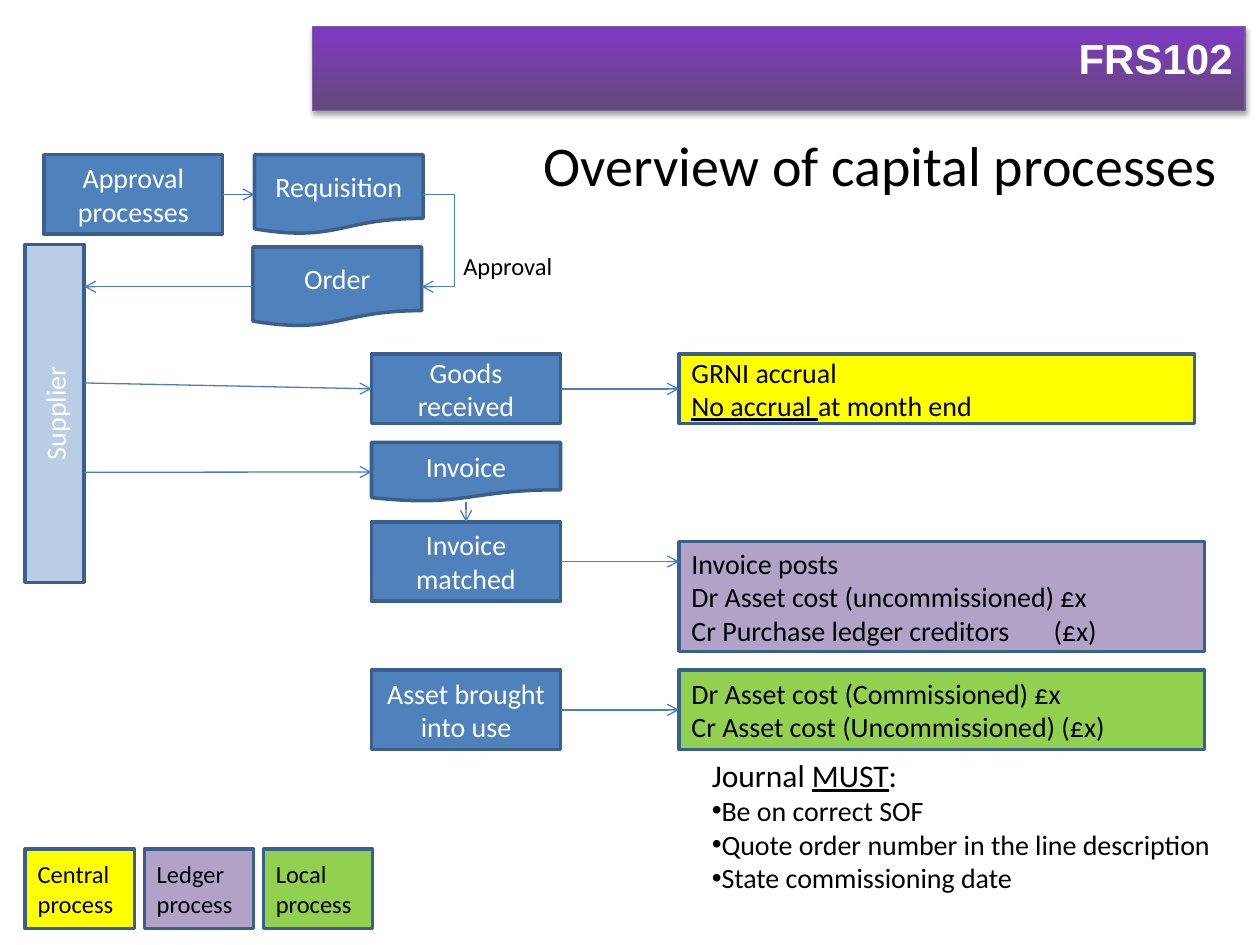
from lxml.etree import SubElement
from pptx import Presentation
from pptx.dml.color import RGBColor
from pptx.enum.shapes import MSO_CONNECTOR as Line, MSO_SHAPE as Geometry
from pptx.enum.text import MSO_ANCHOR as Anchor, PP_ALIGN as Align
from pptx.oxml.ns import qn
from pptx.util import Cm, Pt

BLACK = RGBColor(0x00, 0x00, 0x00)
WHITE = RGBColor(0xFF, 0xFF, 0xFF)
BLUE = RGBColor(0x4F, 0x81, 0xBD)
PALE_BLUE = RGBColor(0xB9, 0xCD, 0xE5)
OUTLINE = RGBColor(0x3A, 0x5F, 0x8C)
ARROW = RGBColor(0x4B, 0x7E, 0xBC)
YELLOW = RGBColor(0xFF, 0xFF, 0x00)
LILAC = RGBColor(0xB3, 0xA2, 0xC7)
GREEN = RGBColor(0x92, 0xD0, 0x50)
BANNER_DARK = RGBColor(0x63, 0x49, 0x77)
BANNER_LIGHT = RGBColor(0x7F, 0x39, 0xC5)
BANNER_LINE = RGBColor(0x7D, 0x60, 0xA0)

TOP, LEFT, BOTTOM, RIGHT = range(4)
STEP_X, STEP_W = 7.49, 3.81
ENTRY_X, ENTRY_W = 13.69, 10.59
SUPPLIER_RIGHT = 1.7
ELBOW_REACH = 0.64
AMOUNT_TAB = 7.3

STEPS = {
    "approval": (Geometry.RECTANGLE, (0.89, 3.12, 3.6, 1.6), BLUE, "Approval processes"),
    "requisition": (Geometry.FLOWCHART_DOCUMENT, (5.13, 3.12, 3.4, 1.6), BLUE, "Requisition"),
    "order": (Geometry.FLOWCHART_DOCUMENT, (5.1, 4.98, 3.4, 1.6), BLUE, "Order"),
    "goods": (Geometry.FLOWCHART_PROCESS, (STEP_X, 7.14, STEP_W, 1.4), BLUE, "Goods received"),
    "invoice": (Geometry.FLOWCHART_DOCUMENT, (STEP_X, 8.92, STEP_W, 1.19), BLUE, "Invoice"),
    "supplier": (Geometry.RECTANGLE, (0.51, 4.93, 1.19, 6.81), PALE_BLUE, "Supplier"),
    "matched": (Geometry.FLOWCHART_PROCESS, (STEP_X, 10.52, STEP_W, 1.6), BLUE, "Invoice matched"),
    "in use": (Geometry.FLOWCHART_PROCESS, (STEP_X, 13.51, STEP_W, 1.6), BLUE,
               "Asset brought into use"),
}
ENTRIES = {
    "accrual": ((ENTRY_X, 7.14, 10.39, 1.4), YELLOW,
                [["GRNI accrual"], [("No accrual ", True), "at month end"]]),
    "posting": ((ENTRY_X, 10.92, ENTRY_W, 2.21), LILAC,
                [["Invoice posts"], ["Dr Asset cost (uncommissioned) £x"],
                 ["Cr Purchase ledger creditors\t(£x)"]]),
    "journal": ((ENTRY_X, 13.51, ENTRY_W, 1.6), GREEN,
                [["Dr Asset cost (Commissioned) £x"],
                 ["Cr Asset cost (Uncommissioned) (£x)"]]),
}
LEGEND = [("Central process", YELLOW), ("Ledger process", LILAC), ("Local process", GREEN)]
LEGEND_PITCH = 2.4
LINKS = [
    (("approval", RIGHT), ("requisition", LEFT)),
    (("order", LEFT), (SUPPLIER_RIGHT, 5.78)),
    ((SUPPLIER_RIGHT, 7.72), ("goods", LEFT)),
    (("goods", RIGHT), ("accrual", LEFT)),
    ((SUPPLIER_RIGHT, 9.52), ("invoice", LEFT)),
    (("invoice", BOTTOM), ("matched", TOP)),
    (("matched", RIGHT), (ENTRY_X, 11.32)),
    (("in use", RIGHT), ("journal", LEFT)),
]
RULES = ["Be on correct SOF", "Quote order number in the line description",
         "State commissioning date"]


def write(shape, paragraphs, size, color=BLACK, align=Align.LEFT, anchor=Anchor.MIDDLE,
          font="Calibri", bold=False):
    frame = shape.text_frame
    frame.word_wrap = True
    frame.vertical_anchor = anchor
    for index, runs in enumerate(paragraphs):
        paragraph = frame.paragraphs[0] if index == 0 else frame.add_paragraph()
        paragraph.alignment = align
        for item in runs:
            text, underline = (item, False) if isinstance(item, str) else item
            run = paragraph.add_run()
            run.text = text
            run.font.size = Pt(size)
            run.font.name = font
            run.font.bold = bold
            run.font.underline = underline
            run.font.color.rgb = color
            if "\t" in text:
                tabs = SubElement(paragraph._p.get_or_add_pPr(), qn("a:tabLst"))
                SubElement(tabs, qn("a:tab"), pos=str(Cm(AMOUNT_TAB)), algn="l")
    return frame


def add_box(slide, geometry, place, fill):
    shape = slide.shapes.add_shape(geometry, *map(Cm, place))
    shape.shadow.inherit = False
    shape.fill.solid()
    shape.fill.fore_color.rgb = fill
    shape.line.color.rgb = OUTLINE
    shape.line.width = Pt(2)
    return shape


def add_text(slide, place, paragraphs, size, **style):
    return write(slide.shapes.add_textbox(*map(Cm, place)), paragraphs, size, **style)


def add_banner(slide):
    banner = add_box(slide, Geometry.RECTANGLE, (6.3, 0.53, 18.8, 1.7), BANNER_DARK)
    banner.fill.gradient()
    banner.fill.gradient_angle = 90
    for stop, color in zip(banner.fill.gradient_stops, (BANNER_DARK, BANNER_LIGHT)):
        stop.color.rgb = color
    banner.line.color.rgb = BANNER_LINE
    banner.line.width = Pt(0.75)
    effects = banner._element.spPr.find(qn("a:effectLst"))
    shadow = SubElement(effects, qn("a:outerShdw"), blurRad=str(Pt(3.1)), dist=str(Pt(1.8)),
                        dir="5400000", rotWithShape="0")
    color = SubElement(shadow, qn("a:srgbClr"), val="000000")
    SubElement(color, qn("a:alpha"), val="35000")
    write(banner, [["FRS102"]], 24, WHITE, Align.RIGHT, Anchor.TOP, "Arial", True)


def locate(end, boxes):
    if not isinstance(end[0], str):
        return Cm(end[0]), Cm(end[1])
    box, site = boxes[end[0]], end[1]
    across = {LEFT: 0, RIGHT: 2}.get(site, 1)
    down = {TOP: 0, BOTTOM: 2}.get(site, 1)
    return box.left + box.width * across // 2, box.top + box.height * down // 2


def add_link(slide, boxes, start, end, kind=Line.STRAIGHT):
    connector = slide.shapes.add_connector(kind, *locate(start, boxes), *locate(end, boxes))
    for point, connect in ((start, connector.begin_connect), (end, connector.end_connect)):
        if isinstance(point[0], str):
            connect(boxes[point[0]], point[1])
    connector.line.color.rgb = ARROW
    connector.line.width = Pt(0.75)
    SubElement(connector.line._get_or_add_ln(), qn("a:tailEnd"), type="arrow")
    SubElement(connector._element.spPr, qn("a:effectLst"))
    return connector


def main():
    presentation = Presentation()
    presentation.slide_width, presentation.slide_height = Cm(25.4), Cm(19.05)
    slide = presentation.slides.add_slide(presentation.slide_layouts[6])
    add_banner(slide)
    add_text(slide, (10.11, 2.13, 15.29, 2.36), [["Overview of capital processes"]], 32,
             align=Align.CENTER)

    boxes = {}
    for name, (geometry, place, fill, text) in STEPS.items():
        boxes[name] = add_box(slide, geometry, place, fill)
        write(boxes[name], [[text]], 16, WHITE, Align.CENTER)
    boxes["supplier"].text_frame._txBody.bodyPr.set("vert", "vert270")
    for name, (place, fill, paragraphs) in ENTRIES.items():
        boxes[name] = add_box(slide, Geometry.FLOWCHART_PROCESS, place, fill)
        write(boxes[name], paragraphs, 16)
    for index, (text, fill) in enumerate(LEGEND):
        place = (0.51 + index * LEGEND_PITCH, 17.12, 2.2, 1.6)
        write(add_box(slide, Geometry.FLOWCHART_PROCESS, place, fill), [[text]], 14)

    for start, end in LINKS:
        add_link(slide, boxes, start, end)
    elbow = add_link(slide, boxes, ("requisition", RIGHT), ("order", RIGHT), Line.ELBOW)
    bend = -round(Cm(ELBOW_REACH) / elbow.width * 100000)
    guides = elbow._element.spPr.find(qn("a:prstGeom")).get_or_add_avLst()
    SubElement(guides, qn("a:gd"), name="adj1", fmla=f"val {bend}")

    add_text(slide, (9.09, 4.93, 2.79, 0.86), [["Approval"]], 14, anchor=Anchor.TOP)
    frame = add_text(slide, (14.1, 15.11, 11, 3.07),
                     [["Journal ", ("MUST", True), ":"]] + [[rule] for rule in RULES], 16,
                     anchor=Anchor.TOP)
    heading, *bullets = frame.paragraphs
    for run in heading.runs:
        run.font.size = Pt(18)
    for paragraph in bullets:
        properties = paragraph._p.get_or_add_pPr()
        SubElement(properties, qn("a:buFont"), typeface="Arial")
        SubElement(properties, qn("a:buChar"), char="•")
    presentation.save("out.pptx")


if __name__ == "__main__":
    main()
